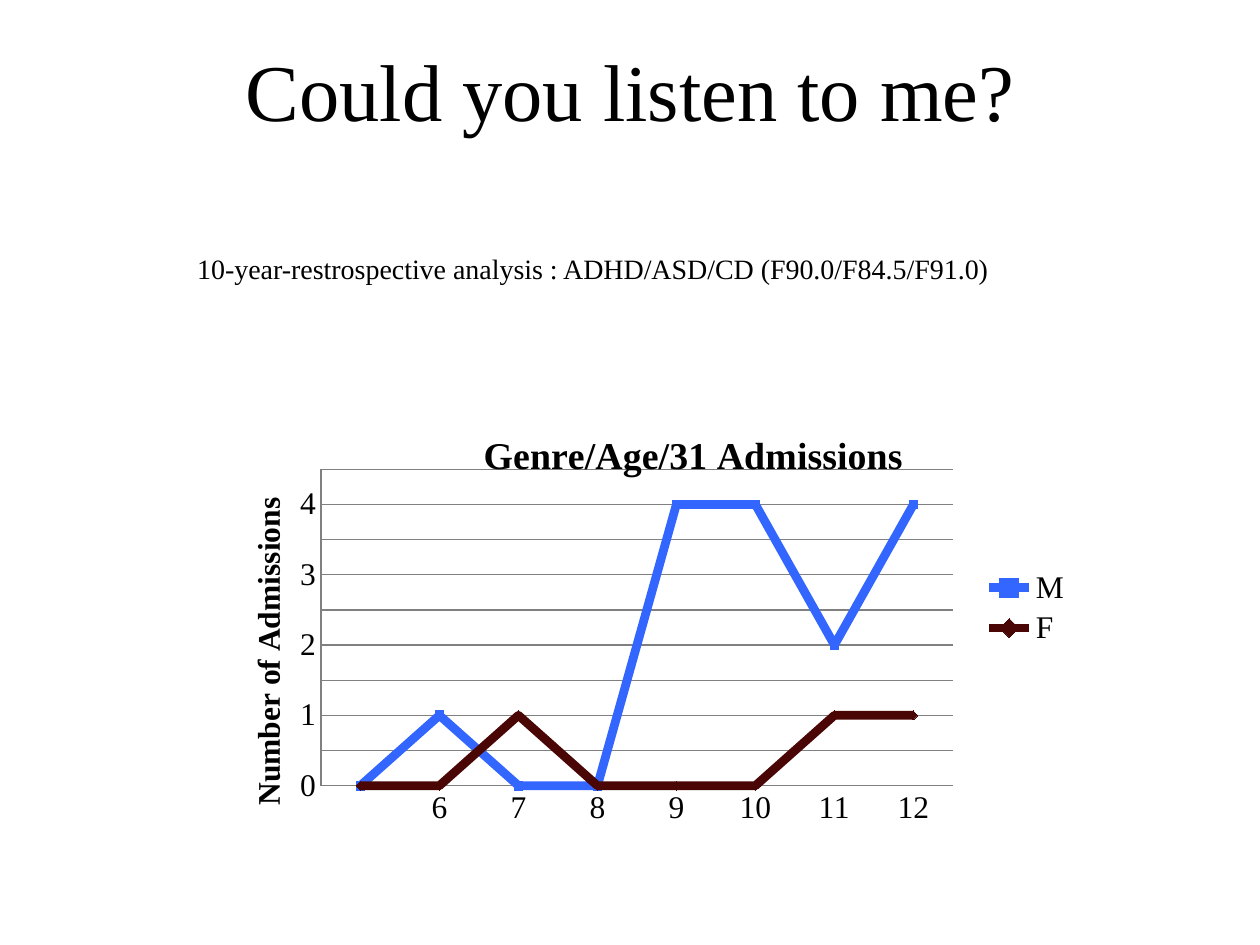
from copy import deepcopy

from lxml import etree
from pptx import Presentation
from pptx.chart.data import CategoryChartData
from pptx.dml.color import RGBColor
from pptx.enum.chart import XL_CHART_TYPE, XL_LEGEND_POSITION, XL_MARKER_STYLE, XL_TICK_MARK
from pptx.enum.text import MSO_ANCHOR, PP_ALIGN
from pptx.oxml.ns import qn
from pptx.util import Pt

SCALE = 914400 // 126
FONT = "Times New Roman"
COLORS = {"text": "000000", "grid": "808080", "M": "3366FF", "F": "4A0505"}
LINE_CHART = XL_CHART_TYPE.LINE_MARKERS
LEGEND_RIGHT = XL_LEGEND_POSITION.RIGHT
NO_TICK = XL_TICK_MARK.NONE
MARKERS = {"M": XL_MARKER_STYLE.SQUARE, "F": XL_MARKER_STYLE.DIAMOND}
CENTER = PP_ALIGN.CENTER
MIDDLE = MSO_ANCHOR.MIDDLE

AGES = ["", "6", "7", "8", "9", "10", "11", "12"]
ADMISSIONS = {"M": [0, 1, 0, 0, 4, 4, 2, 4], "F": [0, 0, 1, 0, 0, 0, 1, 1]}


def px(length):
    return length * SCALE


def color(name):
    return RGBColor.from_string(COLORS[name])


def style_font(font, size, bold=False):
    font.name = FONT
    font.size = Pt(size)
    font.bold = bold
    font.color.rgb = color("text")


def add_text(page, box, text, size):
    frame = page.shapes.add_textbox(*map(px, box)).text_frame
    frame.word_wrap = True
    frame.vertical_anchor = MIDDLE
    para = frame.paragraphs[0]
    para.text = text
    para.alignment = CENTER
    style_font(para.font, size)


def set_layout(element, after, **fractions):
    """Fix a chart part's place, as fractions of the chart, behind its child `after`."""
    for old in element.findall(qn("c:layout")):
        element.remove(old)
    layout = etree.Element(qn("c:layout"))
    manual = etree.SubElement(layout, qn("c:manualLayout"))
    settings = {"xMode": "edge", "yMode": "edge", **fractions}
    if "w" in fractions:
        settings = {"layoutTarget": "inner", **settings}
    for tag, value in settings.items():
        etree.SubElement(manual, qn(f"c:{tag}")).set("val", str(value))
    position = element.index(element.find(qn(after))) + 1 if after else 0
    element.insert(position, layout)


def set_title(owner, title, text, size, x, y):
    owner.has_title = True
    para = title.text_frame.paragraphs[0]
    para.text = text
    style_font(para.font, size, bold=True)
    set_layout(title._element, "c:tx", x=x, y=y)


def style_axes(chart):
    values, ages = chart.value_axis, chart.category_axis
    values.minimum_scale, values.maximum_scale = 0, 4.5
    values.major_unit, values.minor_unit = 1, 0.5
    values.has_major_gridlines = values.has_minor_gridlines = True
    values.tick_labels.number_format = "0"
    values.tick_labels.number_format_is_linked = False
    for part in (values, ages, values.major_gridlines):
        part.format.line.color.rgb = color("grid")
        part.format.line.width = Pt(0.75)
    major, minor = (values._element.find(qn(f"c:{rank}Gridlines")) for rank in ("major", "minor"))
    minor.append(deepcopy(major[0]))
    for axis in (values, ages):
        axis.major_tick_mark = axis.minor_tick_mark = NO_TICK
        style_font(axis.tick_labels.font, 18)


def style_series(series):
    tint = color(series.name)
    series.smooth = False
    series.format.line.color.rgb = tint
    series.format.line.width = Pt(5)
    series.marker.style = MARKERS[series.name]
    series.marker.size = 5
    for fill in (series.marker.format.fill, series.marker.format.line.fill):
        fill.solid()
        fill.fore_color.rgb = tint


def add_admissions_chart(page, box):
    data = CategoryChartData()
    data.categories = AGES
    for name, counts in ADMISSIONS.items():
        data.add_series(name, counts)
    chart = page.shapes.add_chart(LINE_CHART, *map(px, box), data).chart
    style_font(chart.font, 18)
    set_title(chart, chart.chart_title, "Genre/Age/31 Admissions", 21.6, 0.3, 0.1)
    axis = chart.value_axis
    set_title(axis, axis.axis_title, "Number of Admissions", 18, 0.03, 0.25)
    style_axes(chart)
    chart.plots[0].vary_by_categories = False
    for series in chart.plots[0].series:
        style_series(series)
    chart.has_legend = True
    chart.legend.position = LEGEND_RIGHT
    chart.legend.include_in_layout = False
    style_font(chart.legend.font, 18)
    set_layout(chart.legend._element, "c:legendPos", x=0.88, y=0.41)
    plot_area = chart._chartSpace.chart.plotArea
    set_layout(plot_area, None, x=0.12, y=0.2, w=0.73, h=0.7)


def main():
    deck = Presentation()
    deck.slide_width, deck.slide_height = px(1260), px(945)
    page = deck.slides.add_slide(deck.slide_layouts[6])
    add_text(page, (69, 208, 1048, 120),
             "10-year-restrospective analysis : ADHD/ASD/CD (F90.0/F84.5/F91.0)", 16)
    add_admissions_chart(page, (217, 379, 866, 452))
    add_text(page, (126, 29, 1008, 120), "Could you listen to me?", 46)
    deck.save("out.pptx")


if __name__ == "__main__":
    main()
